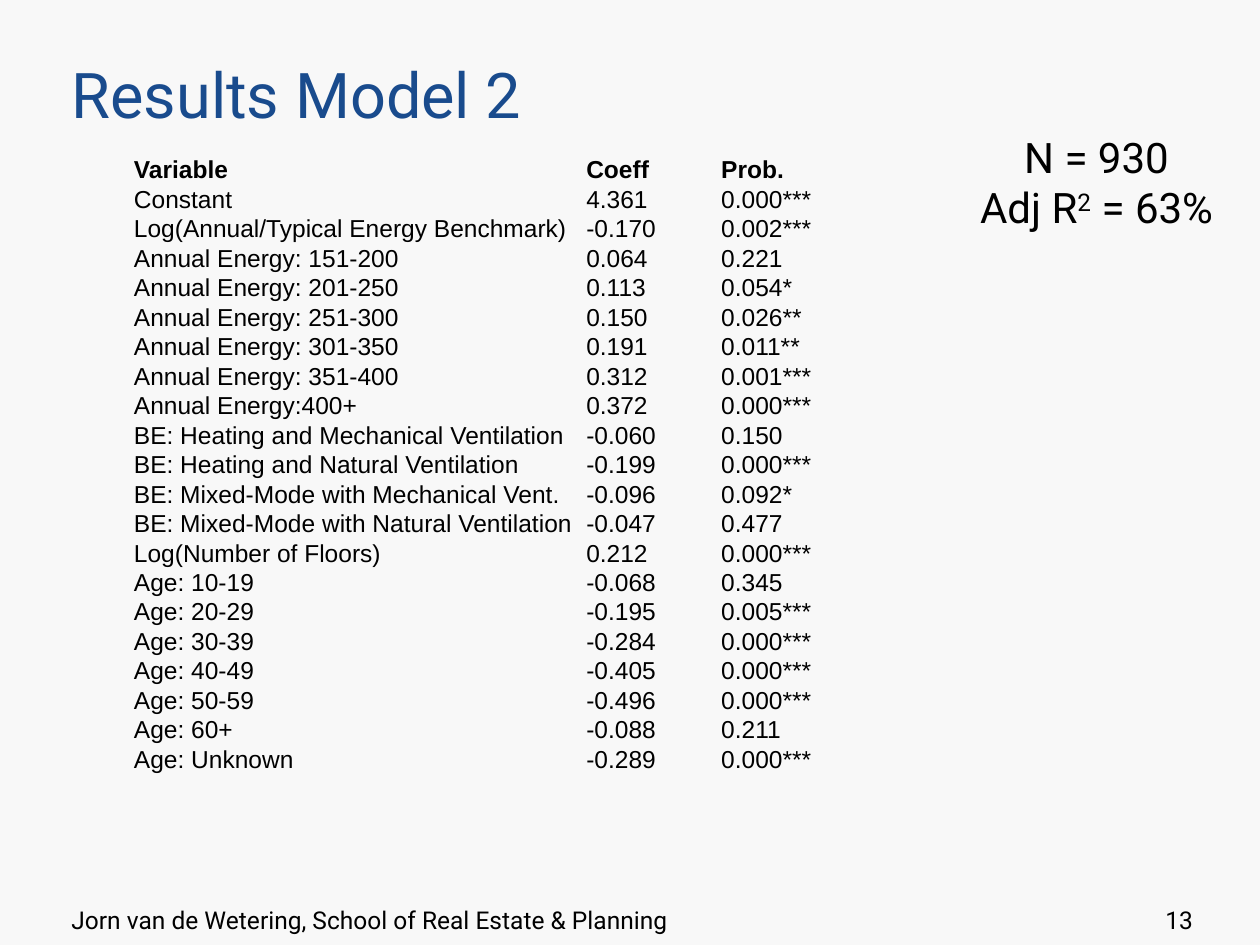
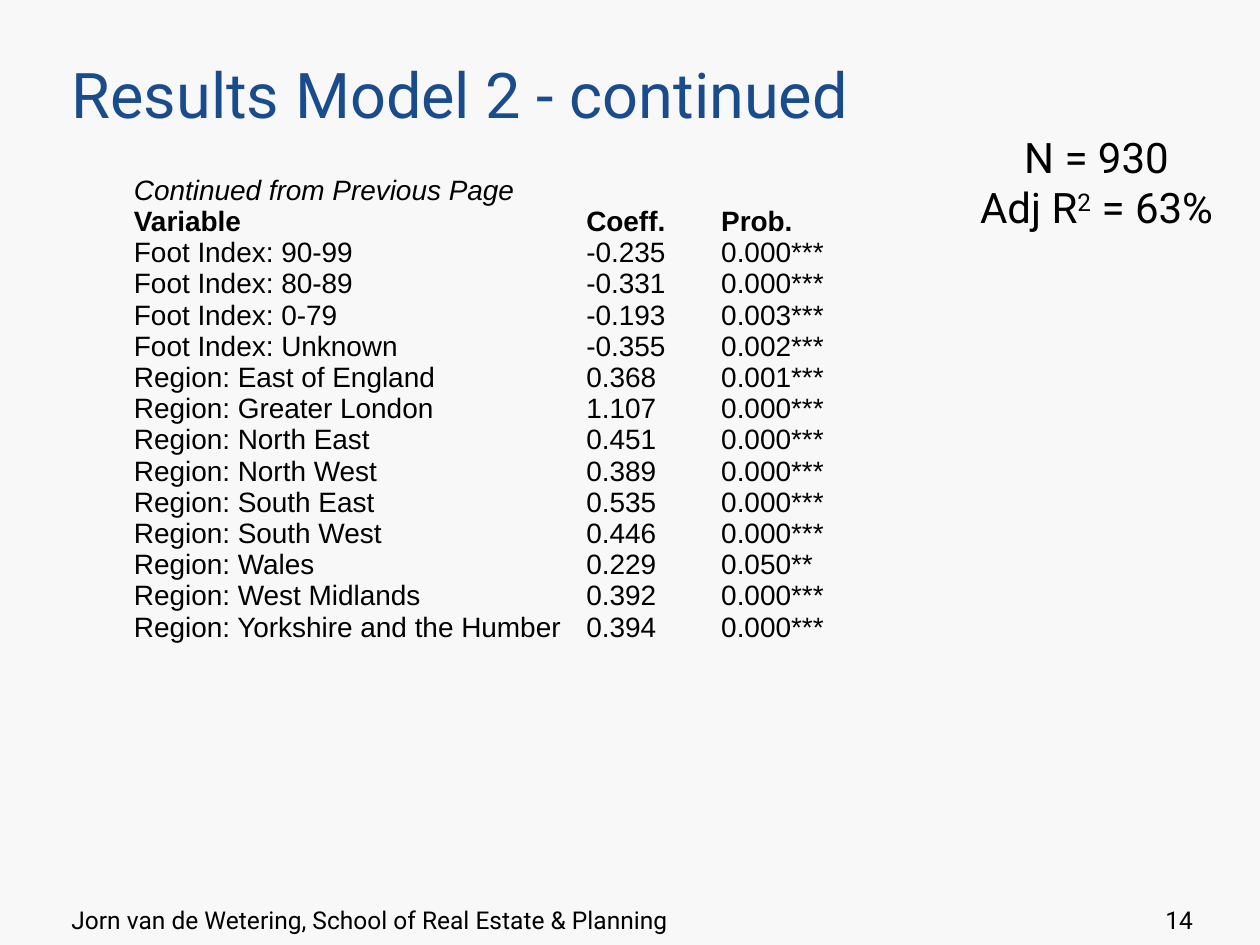
from dataclasses import dataclass

from pptx import Presentation
from pptx.dml.color import RGBColor
from pptx.enum.text import MSO_ANCHOR, MSO_AUTO_SIZE, PP_ALIGN
from pptx.util import Cm, Pt

LEFT, CENTER, RIGHT = PP_ALIGN.LEFT, PP_ALIGN.CENTER, PP_ALIGN.RIGHT
MIDDLE, BOTTOM = MSO_ANCHOR.MIDDLE, MSO_ANCHOR.BOTTOM
NO_FIT = MSO_AUTO_SIZE.NONE
TITLE_ONLY = 5
NO_STYLE = "{2D5ABB26-0587-4C30-8999-92F81FD0307C}"


@dataclass(frozen=True)
class Theme:
    paper: RGBColor = RGBColor(0xF8, 0xF8, 0xF8)
    blue: RGBColor = RGBColor(0x19, 0x4B, 0x8D)
    black: RGBColor = RGBColor(0, 0, 0)
    text_font: str = "Roboto"
    table_font: str = "Arial"
    title_size: int = 36
    stat_size: int = 24
    footer_size: int = 14


theme = Theme()
FOOTER = "Jorn van de Wetering, School of Real Estate & Planning"
COLUMN_WIDTHS = (9.12, 2.72, 2.46)

# Regression results
model_rows = [
    ("Variable", "Coeff", "Prob."),
    ("Constant", "4.361", "0.000***"),
    ("Log(Annual/Typical Energy Benchmark)", "-0.170", "0.002***"),
    ("Annual Energy: 151-200", "0.064", "0.221"),
    ("Annual Energy: 201-250", "0.113", "0.054*"),
    ("Annual Energy: 251-300", "0.150", "0.026**"),
    ("Annual Energy: 301-350", "0.191", "0.011**"),
    ("Annual Energy: 351-400", "0.312", "0.001***"),
    ("Annual Energy:400+", "0.372", "0.000***"),
    ("BE: Heating and Mechanical Ventilation", "-0.060", "0.150"),
    ("BE: Heating and Natural Ventilation", "-0.199", "0.000***"),
    ("BE: Mixed-Mode with Mechanical Vent.", "-0.096", "0.092*"),
    ("BE: Mixed-Mode with Natural Ventilation", "-0.047", "0.477"),
    ("Log(Number of Floors)", "0.212", "0.000***"),
    ("Age: 10-19", "-0.068", "0.345"),
    ("Age: 20-29", "-0.195", "0.005***"),
    ("Age: 30-39", "-0.284", "0.000***"),
    ("Age: 40-49", "-0.405", "0.000***"),
    ("Age: 50-59", "-0.496", "0.000***"),
    ("Age: 60+", "-0.088", "0.211"),
    ("Age: Unknown", "-0.289", "0.000***"),
]
continued_rows = [
    ("Continued from Previous Page", "", ""),
    ("Variable", "Coeff.", "Prob."),
    ("Foot Index: 90-99", "-0.235", "0.000***"),
    ("Foot Index: 80-89", "-0.331", "0.000***"),
    ("Foot Index: 0-79", "-0.193", "0.003***"),
    ("Foot Index: Unknown", "-0.355", "0.002***"),
    ("Region: East of England", "0.368", "0.001***"),
    ("Region: Greater London", "1.107", "0.000***"),
    ("Region: North East", "0.451", "0.000***"),
    ("Region: North West", "0.389", "0.000***"),
    ("Region: South East", "0.535", "0.000***"),
    ("Region: South West", "0.446", "0.000***"),
    ("Region: Wales", "0.229", "0.050**"),
    ("Region: West Midlands", "0.392", "0.000***"),
    ("Region: Yorkshire and the Humber", "0.394", "0.000***"),
]

# Title, number, rows, table top (cm), row height (cm), type size, line height (pt)
pages = [
    ("Results Model 2", 13, model_rows, 3.12, 0.59, 14, 16.83),
    ("Results Model 2 - continued", 14, continued_rows, 3.48, 0.63, 16, 17.8),
]


def style(p, size, align=LEFT, color=theme.black, name=theme.text_font):
    p.alignment = align
    p.font.size = Pt(size)
    p.font.name = name
    p.font.color.rgb = color


def add_text(s, box, lines, size, align, wrap=True):
    sp = s.shapes.add_textbox(*(Cm(v) for v in box))
    tf = sp.text_frame
    tf.word_wrap = wrap
    tf.vertical_anchor = MIDDLE
    tf.text = "\n".join(lines)
    for p in tf.paragraphs:
        style(p, size, align)
    return tf


prs = Presentation()
prs.slide_width, prs.slide_height = Cm(25.4), Cm(19.05)

# Shared background
fill = prs.slide_master.background.fill
fill.solid()
fill.fore_color.rgb = theme.paper

for title, number, rows, top, row_height, size, line_height in pages:
    s = prs.slides.add_slide(prs.slide_layouts[TITLE_ONLY])

    # Title
    sp = s.shapes.title
    sp.left, sp.top, sp.width, sp.height = Cm(1.19), Cm(0.76), Cm(19.46), Cm(2.01)
    tf = sp.text_frame
    tf.text = title
    tf.word_wrap = False
    tf.auto_size = NO_FIT
    tf.vertical_anchor = BOTTOM
    style(tf.paragraphs[0], theme.title_size, color=theme.blue)

    # Footer and slide number
    add_text(s, (1.19, 18.08, 18.52, 0.94), [FOOTER], theme.footer_size, LEFT)
    add_text(s, (22.42, 18.08, 1.88, 0.94), [str(number)], theme.footer_size, RIGHT)

    # Sample size and fit
    tf = add_text(s, (19.49, 2.51, 5.23, 2.31), ["N = 930", "Adj R"],
                  theme.stat_size, CENTER, wrap=False)
    p = tf.paragraphs[1]
    r = p.add_run()
    r.text = "2"
    r.font._element.set("baseline", "30000")
    p.add_run().text = " = 63%"

    # Coefficient table
    frame = s.shapes.add_table(len(rows), len(COLUMN_WIDTHS), Cm(2.7), Cm(top),
                               Cm(sum(COLUMN_WIDTHS)), Cm(row_height * len(rows)))
    table = frame.table
    table.first_row = table.horz_banding = False
    table._tbl.tblPr[0].text = NO_STYLE
    for column, width in zip(table.columns, COLUMN_WIDTHS):
        column.width = Cm(width)
    for i, values in enumerate(rows):
        for j, value in enumerate(values):
            cell = table.cell(i, j)
            cell.fill.background()
            cell.margin_left = cell.margin_right = 0
            cell.margin_top = cell.margin_bottom = 0
            cell.vertical_anchor = BOTTOM
            cell.text = value
            p = cell.text_frame.paragraphs[0]
            p.line_spacing = Pt(line_height)
            style(p, size, name=theme.table_font)
            p.font.bold = values[0] == "Variable"
            p.font.italic = values[0].startswith("Continued")

prs.save("out.pptx")
